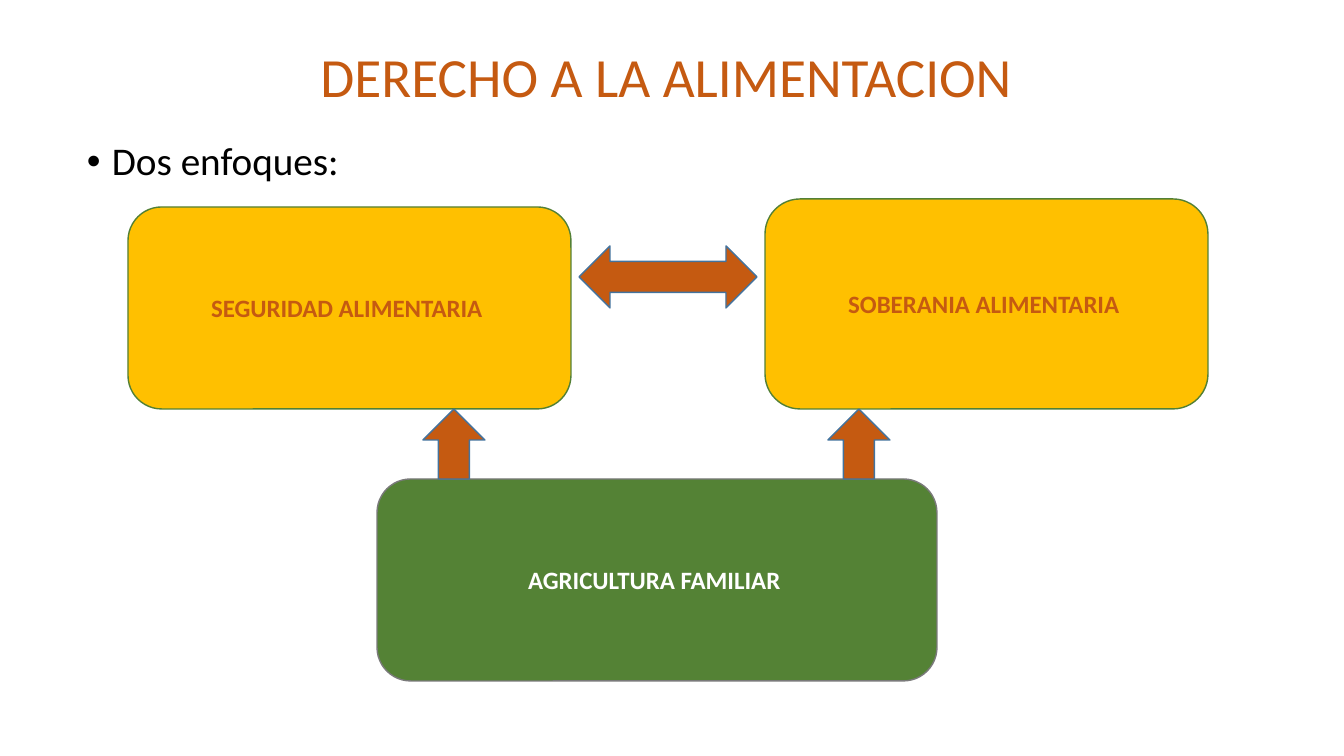
import pptx
import pptx.util
import pptx.dml.color
import pptx.enum.shapes
import pptx.enum.text
import lxml.etree

SHAPES = pptx.enum.shapes.MSO_SHAPE
ALIGN = pptx.enum.text.PP_ALIGN
ANCHOR = pptx.enum.text.MSO_ANCHOR

# Content: lengths in px, (left, top, width, height)
SLIDE_SIZE = (1344, 756)
ORANGE, YELLOW, GREEN = "C55A11", "FFC000", "548235"
DARK_GREEN, GREY, BLUE = "538035", "7A7A7A", "43739E"

TITLE = ("DERECHO A LA ALIMENTACION ", (77, 30, 1191, 99))
BODY = ("Dos enfoques:", (77, 137, 1191, 559))
BULLET_INDENT = 25

BOXES = [  # text, place, fill, line, text colour
    ("SEGURIDAD ALIMENTARIA ", (128, 207, 443, 202), YELLOW, DARK_GREEN, ORANGE),
    ("SOBERANIA ALIMENTARIA ", (765, 199, 443, 210), YELLOW, DARK_GREEN, ORANGE),
    ("AGRICULTURA FAMILIAR ", (377, 479, 560, 202), GREEN, GREY, "FFFFFF"),
]
ARROWS = [  # preset, place, rotation
    (SHAPES.RIGHT_ARROW, (824, 413, 70, 62), 270),
    (SHAPES.RIGHT_ARROW, (419, 413, 70, 62), 270),
    (SHAPES.LEFT_RIGHT_ARROW, (579, 246, 178, 62), 0),
]


def px(length):
    return round(length * 914400 / 100.8)


def color(value):
    return pptx.dml.color.RGBColor.from_string(value)


def set_values(target, values):
    for name, value in values.items():
        setattr(target, name, value)


def write(shape, text, size, text_color, bold=False, anchor=ANCHOR.MIDDLE, **layout):
    set_values(shape.text_frame, {"word_wrap": True, "vertical_anchor": anchor})
    paragraph = shape.text_frame.paragraphs[0]
    set_values(paragraph, {"alignment": ALIGN.CENTER, **layout})
    run = paragraph.add_run()
    run.text = text
    set_values(run.font, {"name": "Calibri", "size": pptx.util.Pt(size), "bold": bold})
    run.font.color.rgb = color(text_color)
    return paragraph


def add_bullet(paragraph):
    properties = paragraph._p.get_or_add_pPr()
    properties.set("marL", str(px(BULLET_INDENT)))
    properties.set("indent", str(-px(BULLET_INDENT)))
    namespace = pptx.oxml.ns.qn
    lxml.etree.SubElement(properties, namespace("a:buFont")).set("typeface", "Arial")
    lxml.etree.SubElement(properties, namespace("a:buChar")).set("char", "•")


def add_shape(slide, preset, place, fill, line):
    shape = slide.shapes.add_shape(preset, *map(px, place))
    shape.shadow.inherit = False
    shape.fill.solid()
    shape.fill.fore_color.rgb = color(fill)
    shape.line.color.rgb = color(line)
    shape.line.width = pptx.util.Pt(1)
    return shape


def main():
    presentation = pptx.Presentation()
    width, height = map(px, SLIDE_SIZE)
    set_values(presentation, {"slide_width": width, "slide_height": height})
    slide = presentation.slides.add_slide(presentation.slide_layouts[6])

    # Title and bullet
    text, place = TITLE
    title = slide.shapes.add_textbox(*map(px, place))
    write(title, text, 39.5, ORANGE, line_spacing=0.9)
    text, place = BODY
    body = slide.shapes.add_textbox(*map(px, place))
    add_bullet(write(body, text, 28, "000000", anchor=ANCHOR.TOP, alignment=ALIGN.LEFT,
                     line_spacing=0.9, space_before=pptx.util.Pt(10)))

    # Boxes
    for text, place, fill, line, text_color in BOXES:
        box = add_shape(slide, SHAPES.ROUNDED_RECTANGLE, place, fill, line)
        write(box, text, 17.8, text_color, bold=True)

    # Arrows between the boxes
    for preset, place, rotation in ARROWS:
        add_shape(slide, preset, place, ORANGE, BLUE).rotation = rotation

    presentation.save("out.pptx")


if __name__ == "__main__":
    main()
